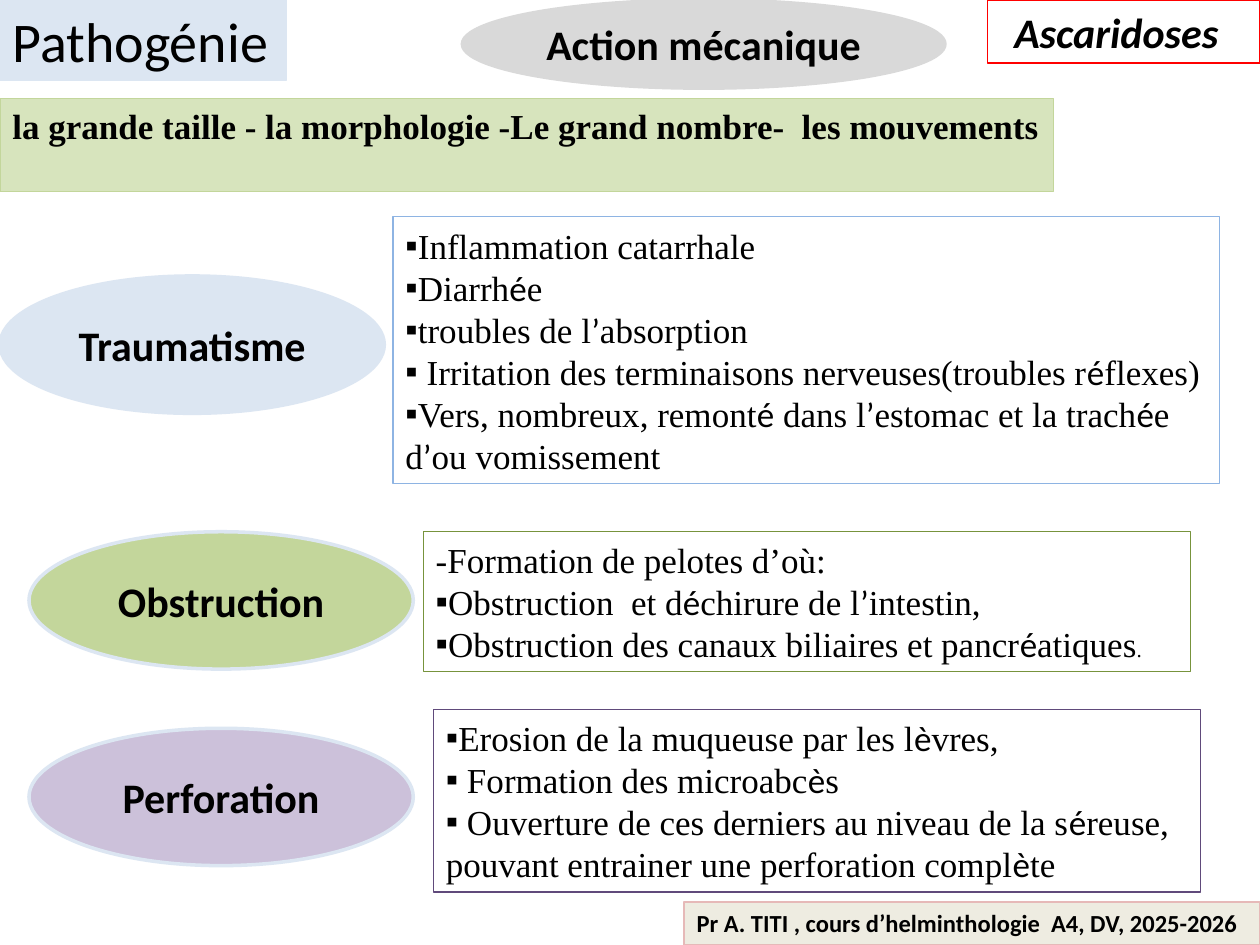
from itertools import groupby

from lxml import etree
from pptx import Presentation
from pptx.dml.color import RGBColor
from pptx.enum.shapes import MSO_SHAPE
from pptx.enum.text import MSO_ANCHOR, PP_ALIGN
from pptx.oxml.ns import qn
from pptx.util import Inches, Pt

RECTANGLE, OVAL = MSO_SHAPE.RECTANGLE, MSO_SHAPE.OVAL
TOP, MIDDLE = MSO_ANCHOR.TOP, MSO_ANCHOR.MIDDLE
LEFT, CENTER = PP_ALIGN.LEFT, PP_ALIGN.CENTER

BLACK = RGBColor(0x00, 0x00, 0x00)
RED = RGBColor(0xFF, 0x00, 0x00)
PALE_BLUE = RGBColor(0xDC, 0xE6, 0xF2)
SKY_BLUE = RGBColor(0x8E, 0xB4, 0xE3)
PALE_GREEN = RGBColor(0xD7, 0xE4, 0xBD)
GREEN = RGBColor(0xC3, 0xD6, 0x9B)
DARK_GREEN = RGBColor(0x77, 0x93, 0x3C)
LILAC = RGBColor(0xCC, 0xC1, 0xDA)
PURPLE = RGBColor(0x60, 0x4A, 0x7B)
GREY = RGBColor(0xD9, 0xD9, 0xD9)
CREAM = RGBColor(0xEE, 0xEC, 0xE1)
PINK = RGBColor(0xE6, 0xB9, 0xB8)

SANS, SERIF = "Calibri", "Times New Roman"
SANS_LETTERS = "éè’"  # set in the sans font inside bulleted lines
BULLET = "▪"
SLIDE_WIDTH, SLIDE_HEIGHT = 10, 7.5
INSET = 0.1
DETAIL_RIGHT_INSET = 0.05
OVAL_SIZE = (3.05, 1.09)

# text, box, fill, line, font, size, bold, italic, left inset
LABELS = [
    ("Pathogénie", (0, 0, 2.27, 0.64), PALE_BLUE, PALE_BLUE,
     SANS, 32, False, False, INSET),
    ("Ascaridoses", (7.84, 0, 2.16, 0.5), None, RED,
     SANS, 24, True, True, 0.21),
    ("la grande taille - la morphologie -Le grand nombre-  les mouvements",
     (0, 0.78, 8.36, 0.74), PALE_GREEN, GREEN, SERIF, 20, True, False, INSET),
    ("Pr A. TITI , cours d’helminthologie  A4, DV, 2025-2026",
     (5.43, 7.16, 4.57, 0.34), CREAM, PINK, SANS, 14, True, False, INSET),
]

HEADING = ("Action mécanique", (3.67, 0, 3.83, 0.7), GREY, GREY)

# name, oval corner, oval fill, detail box, detail line colour, lead line, bullets
ACTIONS = [
    ("Traumatisme", (0, 2.19), PALE_BLUE, (3.12, 1.72, 6.56, 2.12), SKY_BLUE, None, [
        "Inflammation catarrhale",
        "Diarrhée",
        "troubles de l’absorption",
        " Irritation des terminaisons nerveuses(troubles réflexes)",
        "Vers, nombreux, remonté dans l’estomac et la trachée d’ou vomissement",
    ]),
    ("Obstruction", (0.23, 4.22), GREEN, (3.36, 4.22, 6.09, 1.11), DARK_GREEN,
     "-Formation de pelotes d’où:", [
         "Obstruction  et déchirure de l’intestin,",
         "Obstruction des canaux biliaires et pancréatiques.",
     ]),
    ("Perforation", (0.23, 5.78), LILAC, (3.44, 5.63, 6.09, 1.45), PURPLE, None, [
        "Erosion de la muqueuse par les lèvres,",
        " Formation des microabcès",
        " Ouverture de ces derniers au niveau de la séreuse, "
        "pouvant entrainer une perforation complète",
    ]),
]


def add_box(slide, kind, box, fill, line, line_width, anchor):
    shape = slide.shapes.add_shape(kind, *(Inches(length) for length in box))
    shape.shadow.inherit = False
    if fill is None:
        shape.fill.background()
    else:
        shape.fill.solid()
        shape.fill.fore_color.rgb = fill
    shape.line.color.rgb = line
    shape.line.width = Pt(line_width)
    shape.text_frame.word_wrap = True
    shape.text_frame.vertical_anchor = anchor
    return shape.text_frame


def add_run(paragraph, text, font, size, bold=False, italic=False):
    run = paragraph.add_run()
    run.text = text
    run.font.name = font
    run.font.size = Pt(size)
    run.font.bold = bold
    run.font.italic = italic
    run.font.color.rgb = BLACK


def add_label(slide, text, box, fill, line, font, size, bold, italic, inset):
    frame = add_box(slide, RECTANGLE, box, fill, line, 0.75, TOP)
    frame.margin_left, frame.margin_right = Inches(inset), 0
    paragraph = frame.paragraphs[0]
    paragraph.alignment = LEFT
    add_run(paragraph, text, font, size, bold, italic)


def add_oval(slide, text, box, fill, line):
    frame = add_box(slide, OVAL, box, fill, line, 2, MIDDLE)
    paragraph = frame.paragraphs[0]
    paragraph.alignment = CENTER
    add_run(paragraph, text, SANS, 24, bold=True)


def add_bullet(paragraph):
    """Put a narrow serif bullet right before the text, without an indent."""
    properties = paragraph._p.get_or_add_pPr()
    properties.set("marL", "0")
    properties.set("indent", "0")
    etree.SubElement(properties, qn("a:buFont")).set("typeface", SERIF)
    etree.SubElement(properties, qn("a:buChar")).set("char", BULLET)


def add_bullet_text(paragraph, text):
    """Split the line into serif runs, sans accents and a small final full stop."""
    body = text.rstrip(".")
    for is_sans, letters in groupby(body, lambda letter: letter in SANS_LETTERS):
        add_run(paragraph, "".join(letters), SANS if is_sans else SERIF, 20)
    if body != text:
        add_run(paragraph, ".", SERIF, 12)


def add_details(slide, box, line, lead, bullets):
    frame = add_box(slide, RECTANGLE, box, None, line, 0.75, MIDDLE)
    frame.margin_right = Inches(DETAIL_RIGHT_INSET)
    lines = ([lead] if lead else []) + bullets
    for index, text in enumerate(lines):
        paragraph = frame.add_paragraph() if index else frame.paragraphs[0]
        paragraph.alignment = LEFT
        if text == lead:
            add_run(paragraph, text, SERIF, 20)
        else:
            add_bullet(paragraph)
            add_bullet_text(paragraph, text)


def main():
    presentation = Presentation()
    presentation.slide_width = Inches(SLIDE_WIDTH)
    presentation.slide_height = Inches(SLIDE_HEIGHT)
    slide = presentation.slides.add_slide(presentation.slide_layouts[6])

    for label in LABELS:
        add_label(slide, *label)
    add_oval(slide, *HEADING)
    for name, corner, fill, box, line, lead, bullets in ACTIONS:
        add_oval(slide, name, corner + OVAL_SIZE, fill, PALE_BLUE)
        add_details(slide, box, line, lead, bullets)

    presentation.save("out.pptx")


if __name__ == "__main__":
    main()
